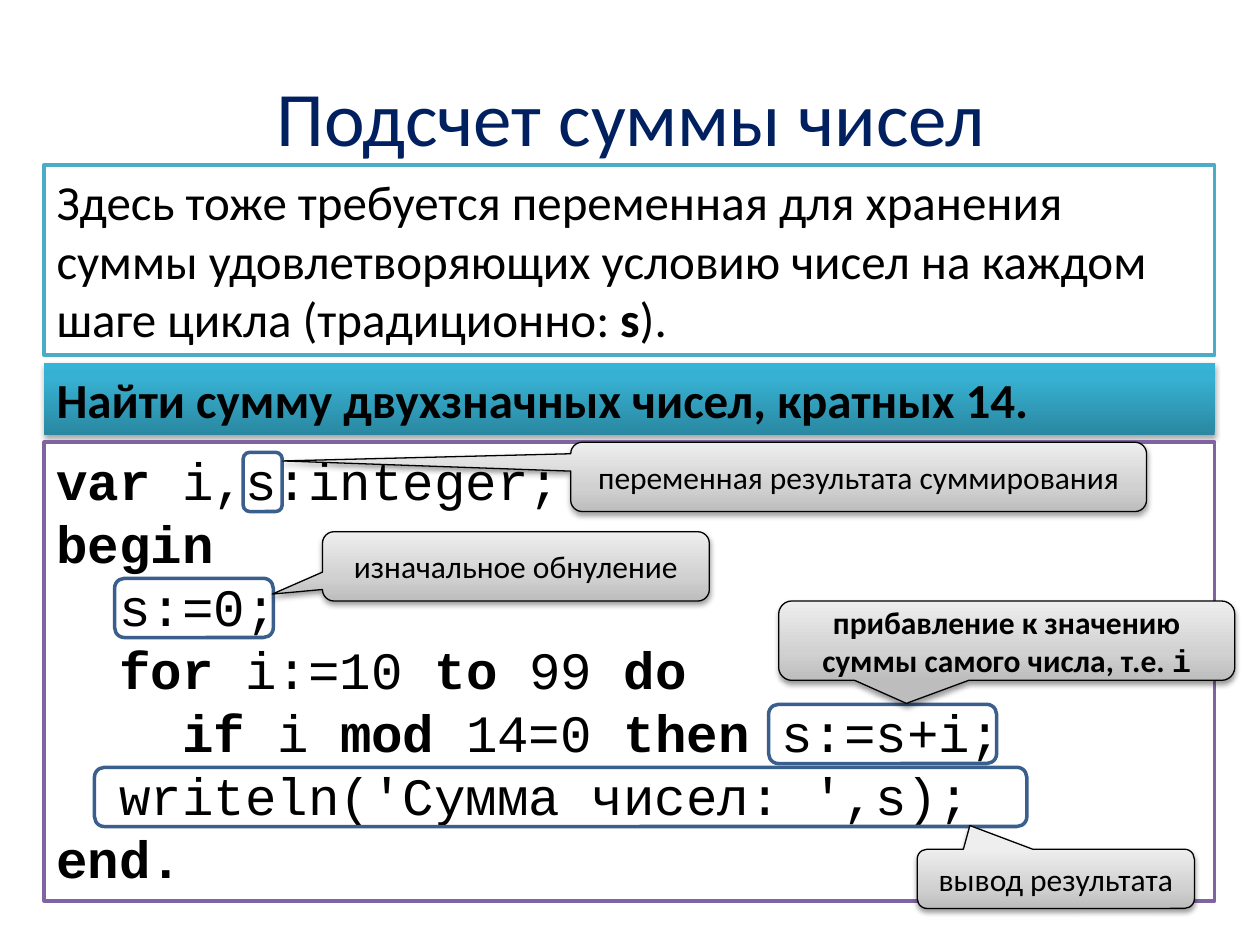
from lxml.etree import SubElement
from pptx import Presentation
from pptx.dml.color import RGBColor
from pptx.enum.shapes import MSO_SHAPE
from pptx.enum.text import MSO_ANCHOR, PP_ALIGN
from pptx.oxml.ns import qn
from pptx.util import Inches, Pt

COLS, ROWS = 100, 75  # slide grid
WIDE, HIGH = Inches(10), Inches(7.5)
SANS, MONO = "Calibri", "Courier New"
GRAY = [(0, "BDBDBD"), (35, "D1D1D1"), (100, "EEEEEE")]
TEAL = [(0, "2A88A2"), (80, "37B1D2"), (100, "34B4D6")]


def color(code):
    return RGBColor.from_string(code)


def scale(box):
    """Turn columns and rows into slide lengths."""
    x, y, w, h = box
    return (int(x * WIDE / COLS), int(y * HIGH / ROWS),
            int(w * WIDE / COLS), int(h * HIGH / ROWS))


def write(shape, *lines, size=28, font=SANS, ink="000000", bold=False,
          align=PP_ALIGN.LEFT, anchor=MSO_ANCHOR.TOP, tabs=()):
    """Fill a shape with lines; * toggles bold and ` toggles the code font."""
    frame = shape.text_frame
    frame.word_wrap = True
    frame.vertical_anchor = anchor
    for n, line in enumerate(lines):
        para = frame.add_paragraph() if n else frame.paragraphs[0]
        para.alignment = align
        if tabs:
            para._p.get_or_add_pPr().set("marL", str(Inches(tabs[n] * 0.5)))
        for b, part in enumerate(line.split("*")):
            for m, piece in enumerate(part.split("`")):
                if piece:
                    run = para.add_run()
                    run.text = piece
                    run.font.size = Pt(size)
                    run.font.name = MONO if m % 2 else font
                    run.font.bold = bold or b % 2 == 1
                    run.font.color.rgb = color(ink)


def shade(shape, stops):
    """Give a shape an upward gradient."""
    shape.fill.gradient()
    shape.fill.gradient_angle = 90
    group = shape._element.spPr.find(".//" + qn("a:gsLst"))
    group.clear()
    for share, code in stops:
        stop = SubElement(group, qn("a:gs"), pos=str(share * 1000))
        SubElement(stop, qn("a:srgbClr"), val=code)


def drop(shape, alpha, dist):
    """Cast a soft shadow straight down."""
    group = shape._element.spPr.find(qn("a:effectLst"))
    cast = SubElement(group, qn("a:outerShdw"), blurRad=str(Pt(3.1)),
                      dist=str(Pt(dist)), dir="5400000", rotWithShape="0")
    tint = SubElement(cast, qn("a:srgbClr"), val="000000")
    SubElement(tint, qn("a:alpha"), val=str(alpha * 1000))


def panel(slide, box, kind=MSO_SHAPE.RECTANGLE, fill=None, line=None, width=2):
    shape = slide.shapes.add_shape(kind, *scale(box))
    shape.shadow.inherit = False
    if isinstance(fill, list):
        shade(shape, fill)
    elif fill:
        shape.fill.solid()
        shape.fill.fore_color.rgb = color(fill)
    else:
        shape.fill.background()
    if line:
        shape.line.color.rgb = color(line)
        shape.line.width = Pt(width)
    else:
        shape.line.fill.background()
    return shape


def head(slide, box):
    title = slide.shapes.title
    title.left, title.top, title.width, title.height = scale(box)
    write(title, "Подсчет суммы чисел", size=44, ink="002060",
          align=PP_ALIGN.CENTER, anchor=MSO_ANCHOR.MIDDLE)


def intro(slide, box):
    x, y, w, h = box
    rule = panel(slide, (x, y, w, 15.1), fill="FFFFFF", line="4BACC6")
    write(rule, "Здесь тоже требуется переменная для хранения суммы "
          "удовлетворяющих условию чисел на каждом шаге цикла "
          "(традиционно: *s*).")
    task = panel(slide, (x, y + h - 5.7, w, 5.7), fill=TEAL)
    drop(task, 35, 1.8)
    write(task, "Найти сумму двухзначных чисел, кратных 14.", bold=True)


def note(slide, box, tip, text, bold):
    """A gray callout whose tip is given as shares of its size."""
    shape = panel(slide, box, MSO_SHAPE.ROUNDED_RECTANGULAR_CALLOUT,
                  GRAY, "000000", 0.75)
    shape.adjustments[0], shape.adjustments[1] = tip
    drop(shape, 38, 1.6)
    write(shape, text, size=18, bold=bold,
          align=PP_ALIGN.CENTER, anchor=MSO_ANCHOR.MIDDLE)


def code(slide, box):
    x, y, w, h = box
    text = panel(slide, box, fill="FFFFFF", line="8064A2")
    write(text, "*var *i,s:integer;", "*begin*", "s:=0;",
          "*for *i:=10 *to* 99 *do*",
          "*if *i *mod *14=0 *then* s:=s+i;",
          "writeln('Сумма чисел: ',s);", "*end.*",
          size=30, font=MONO, tabs=(0, 0, 1, 1, 2, 1, 0))
    # Code line, mark left and width, callout box, tip, text, bold
    notes = [
        (0, 15.8, 3.1, (41.8, 0, 45.7, 5.5), (-1, -0.23),
         "переменная результата суммирования", False),
        (2, 5.6, 12.6, (22.1, 7.1, 30.7, 5.5), (-0.63, 0.4),
         "изначальное обнуление", False),
        (4, 57.5, 18.1, (58.3, 12.6, 36.2, 6.3), (-0.22, 0.79),
         "прибавление к значению суммы самого числа, т.е. `i`", True),
        (5, 4, 74, (69.3, 32.3, 22, 4.7), (-0.31, -0.9),
         "вывод результата", False),
    ]
    for row, left, wide, (dx, dy, nw, nh), tip, words, bold in notes:
        panel(slide, (x + left, y + 0.8 + 5 * row, wide, 4.7),
              MSO_SHAPE.ROUNDED_RECTANGLE, line="3A5F8C")
        note(slide, (x + dx, y + dy, nw, nh), tip, words, bold)


def main():
    deck = Presentation()
    deck.slide_width, deck.slide_height = WIDE, HIGH
    slide = deck.slides.add_slide(deck.slide_layouts[5])
    head(slide, (5.1, 2.9, 90, 12.5))
    intro(slide, (3.5, 13.1, 92.9, 21.4))
    code(slide, (3.5, 35.1, 92.9, 36.4))
    deck.save("out.pptx")


if __name__ == "__main__":
    main()
